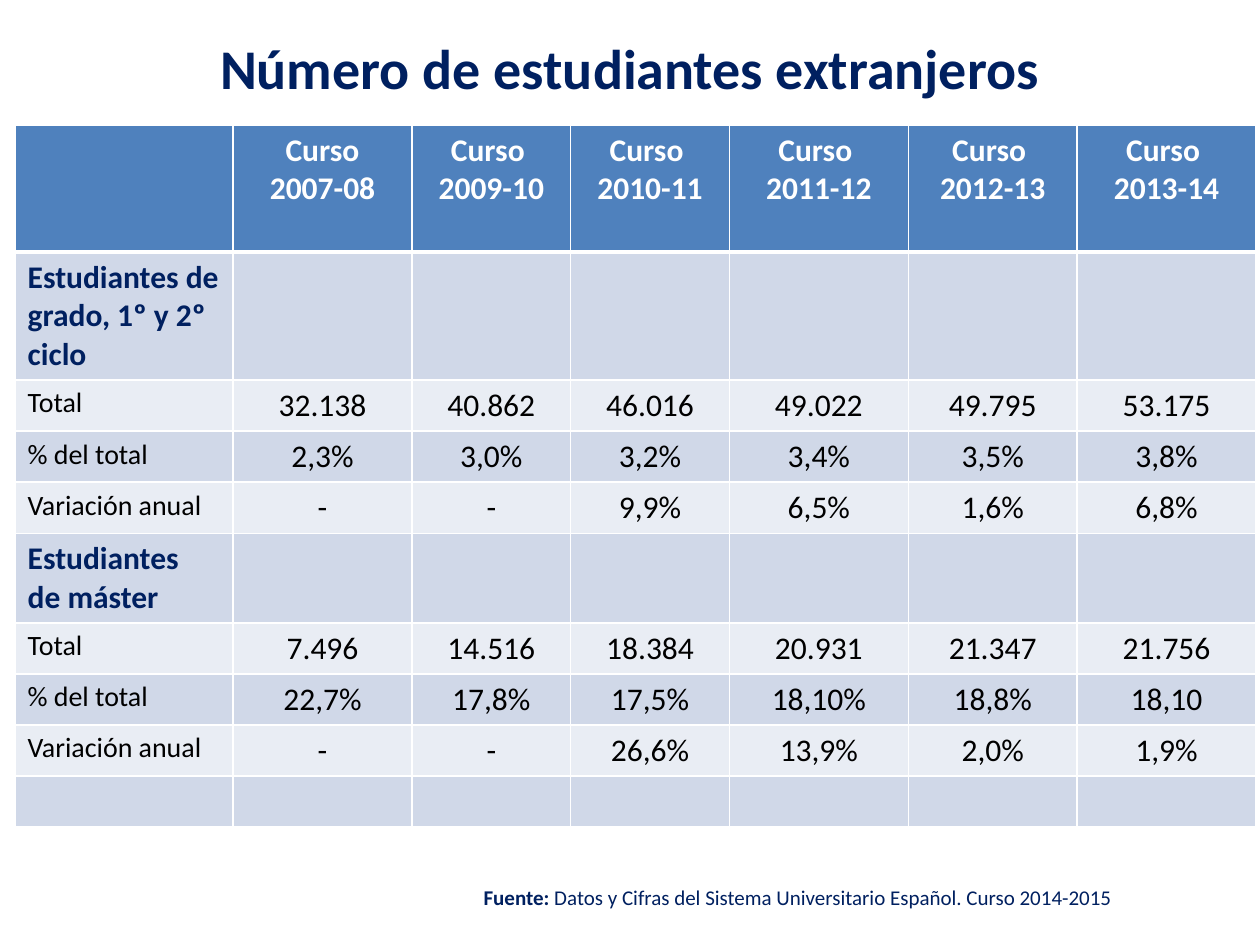
from dataclasses import dataclass

from lxml.etree import SubElement
from pptx import Presentation
from pptx.dml.color import RGBColor
from pptx.enum.text import MSO_ANCHOR, MSO_AUTO_SIZE, PP_ALIGN as Align
from pptx.oxml.ns import qn
from pptx.util import Inches, Pt

FONT = "Calibri"
COLORS = {
    "navy": "002060",
    "header": "4F81BD",
    "band_dark": "D0D8E8",
    "band_light": "E9EDF4",
    "white": "FFFFFF",
    "black": "000000",
}
SLIDE_WIDTH, SLIDE_HEIGHT = 10, 7.5
COLUMN_WIDTHS = [1.73, 1.42, 1.26, 1.26, 1.42, 1.34, 1.42]
ROW_HEIGHT = 0.4
TABLE_LEFT, TABLE_TOP = 0.12, 0.99


@dataclass(frozen=True)
class TextStyle:
    size: int
    color: str
    bold: bool = False
    align: Align = Align.LEFT


@dataclass(frozen=True)
class TableRow:
    label: str
    values: tuple[str, ...] = ("",) * 6
    height: float = ROW_HEIGHT
    label_style: TextStyle = TextStyle(16, "black")
    value_style: TextStyle = TextStyle(18, "black", align=Align.CENTER)


TITLE = TextStyle(32, "navy", True, Align.CENTER)
HEADER = TextStyle(18, "white", True, Align.CENTER)
SECTION = TextStyle(18, "navy", True)
SOURCE_LABEL = TextStyle(12, "navy", True)
SOURCE_TEXT = TextStyle(12, "navy")

COURSES = ("Curso\n2007-08",) + tuple(
    f"Curso \n{year}" for year in ("2009-10", "2010-11", "2011-12", "2012-13", "2013-14"))

ROWS = [
    TableRow("", COURSES, 1.01, HEADER, HEADER),
    TableRow("Estudiantes de grado, 1º y 2º ciclo", height=1.01, label_style=SECTION),
    TableRow("Total", ("32.138", "40.862", "46.016", "49.022", "49.795", "53.175")),
    TableRow("% del total", ("2,3%", "3,0%", "3,2%", "3,4%", "3,5%", "3,8%")),
    TableRow("Variación anual", ("-", "-", "9,9%", "6,5%", "1,6%", "6,8%")),
    TableRow("Estudiantes\nde máster", height=0.71, label_style=SECTION),
    TableRow("Total", ("7.496", "14.516", "18.384", "20.931", "21.347", "21.756")),
    TableRow("% del total", ("22,7%", "17,8%", "17,5%", "18,10%", "18,8%", "18,10")),
    TableRow("Variación anual", ("-", "-", "26,6%", "13,9%", "2,0%", "1,9%")),
    TableRow(""),
]


def rgb(name: str) -> RGBColor:
    return RGBColor.from_string(COLORS[name])


def format_font(font, style: TextStyle) -> None:
    values = {"name": FONT, "size": Pt(style.size), "bold": style.bold}
    for attribute, value in values.items():
        setattr(font, attribute, value)
    font.color.rgb = rgb(style.color)


def write_text(text_frame, text: str, style: TextStyle) -> None:
    text_frame.text = text
    for paragraph in text_frame.paragraphs:
        paragraph.alignment = style.align
        for run in paragraph.runs:
            format_font(run.font, style)


def set_borders(cell, widths: dict[str, int]) -> None:
    """Draw white borders, placed ahead of the cell's fill as the schema asks."""
    properties = cell._tc.get_or_add_tcPr()
    for position, (side, width) in enumerate(widths.items()):
        line = SubElement(properties, qn(f"a:ln{side}"), w=str(Pt(width)))
        fill = SubElement(line, qn("a:solidFill"))
        SubElement(fill, qn("a:srgbClr"), val=COLORS["white"])
        properties.insert(position, line)


def add_student_table(slide) -> None:
    frame = slide.shapes.add_table(
        len(ROWS), len(COLUMN_WIDTHS), Inches(TABLE_LEFT), Inches(TABLE_TOP),
        Inches(sum(COLUMN_WIDTHS)), Inches(sum(row.height for row in ROWS)))
    table = frame.table
    for column, width in zip(table.columns, COLUMN_WIDTHS):
        column.width = Inches(width)
    for row_index, row in enumerate(ROWS):
        table.rows[row_index].height = Inches(row.height)
        band = "band_dark" if row_index % 2 else "band_light"
        fill_name = "header" if row_index == 0 else band
        borders = {"L": 1, "R": 1, "T": 3 if row_index == 1 else 1,
                   "B": 3 if row_index == 0 else 1}
        for column_index, text in enumerate((row.label, *row.values)):
            cell = table.cell(row_index, column_index)
            cell.fill.solid()
            cell.fill.fore_color.rgb = rgb(fill_name)
            set_borders(cell, borders)
            if text:
                style = row.value_style if column_index else row.label_style
                write_text(cell.text_frame, text, style)


def add_title(slide) -> None:
    title = slide.shapes.title
    box = {"left": 0.05 * SLIDE_WIDTH, "top": 0, "width": 0.9 * SLIDE_WIDTH, "height": 1.07}
    for attribute, value in box.items():
        setattr(title, attribute, Inches(value))
    title.text_frame.vertical_anchor = MSO_ANCHOR.MIDDLE
    write_text(title.text_frame, "Número de estudiantes extranjeros", TITLE)


def add_source(slide) -> None:
    left = 3.74
    box = slide.shapes.add_textbox(
        Inches(left), Inches(6.97), Inches(SLIDE_WIDTH - left), Inches(0.3))
    text_frame = box.text_frame
    text_frame.word_wrap = True
    text_frame.auto_size = MSO_AUTO_SIZE.SHAPE_TO_FIT_TEXT
    write_text(text_frame, "Fuente:", SOURCE_LABEL)
    run = text_frame.paragraphs[0].add_run()
    run.text = " Datos y Cifras del Sistema Universitario Español. Curso 2014-2015"
    format_font(run.font, SOURCE_TEXT)


def main() -> None:
    presentation = Presentation()
    presentation.slide_width = Inches(SLIDE_WIDTH)
    presentation.slide_height = Inches(SLIDE_HEIGHT)
    title_only = presentation.slide_layouts[5]
    slide = presentation.slides.add_slide(title_only)
    add_title(slide)
    add_student_table(slide)
    add_source(slide)
    presentation.save("out.pptx")


if __name__ == "__main__":
    main()
